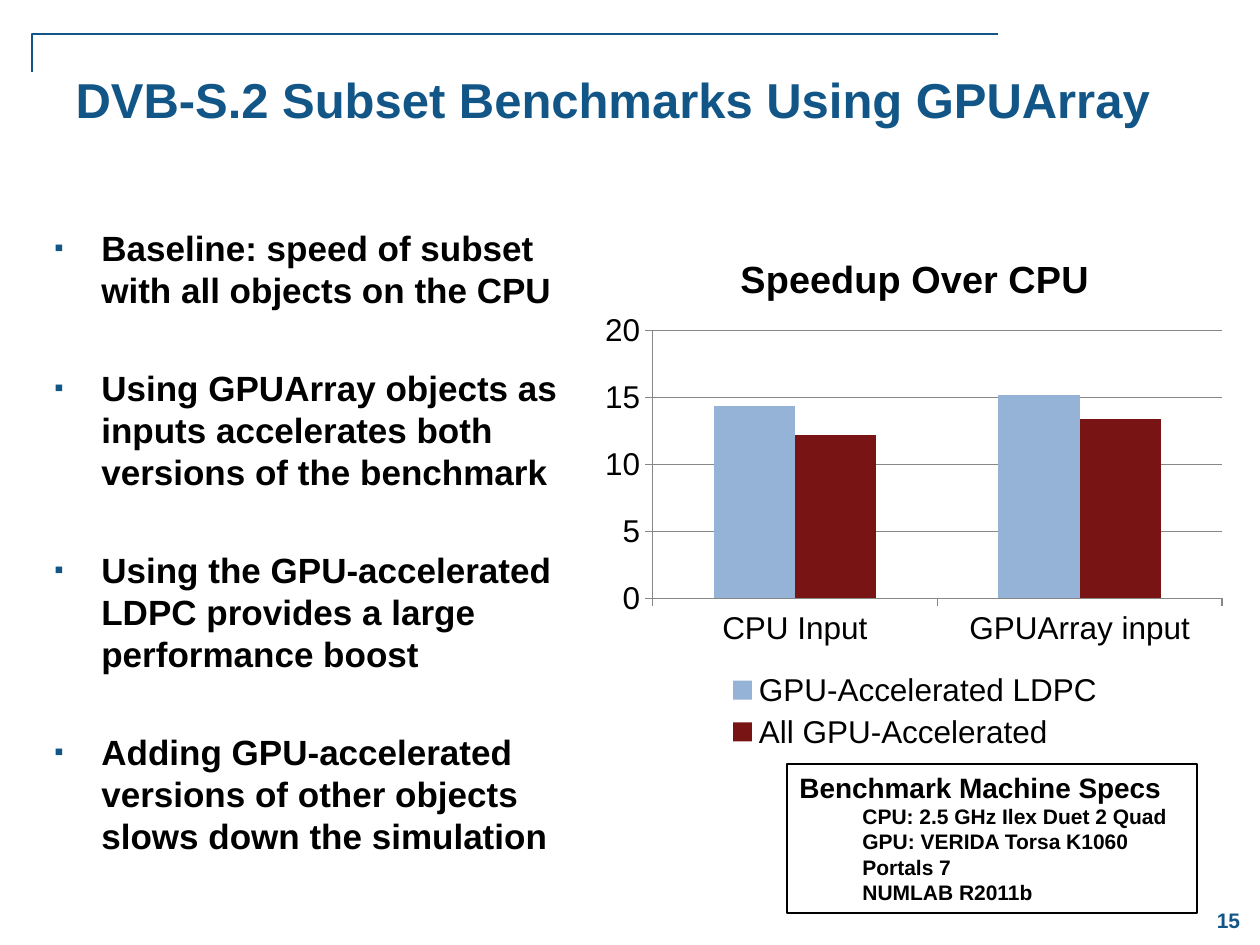
import pptx
import pptx.util
import pptx.chart.data
import pptx.dml.color
import pptx.enum.chart
import pptx.enum.text
import pptx.enum.shapes
import pptx.oxml

NS = 'xmlns:a="http://schemas.openxmlformats.org/drawingml/2006/main"'
CNS = 'xmlns:c="http://schemas.openxmlformats.org/drawingml/2006/chart"'
ALIGN = pptx.enum.text.PP_ALIGN
ANCHOR = pptx.enum.text.MSO_ANCHOR
CHART = pptx.enum.chart
BLUE, BLACK, GREY = "125687", "000000", "878787"
FONT = "Arial"


def px(n):
    return pptx.util.Emu(round(n * 914400 / 126))


def tint(code):
    return pptx.dml.color.RGBColor.from_string(code)


def style(font, size, color=BLACK, bold=True):
    font.name, font.size, font.bold = FONT, pptx.util.Pt(size), bold
    font.color.rgb = tint(color)


def write(frame, text, size=20, color=BLACK, align=ALIGN.LEFT,
          indent=0, bullet=None, gap=0):
    """Put text in the frame's empty first paragraph, or in a new one."""
    first = frame.paragraphs[0]
    para = frame.add_paragraph() if first.runs else first
    props = para._p.get_or_add_pPr()
    if indent:
        props.set("marL", str(px(indent)))
        props.set("indent", str(-px(indent) if bullet else 0))
    if bullet:
        for part in (f'<a:buClr {NS}><a:srgbClr val="{BLUE}"/></a:buClr>',
                     f'<a:buSzPct {NS} val="75000"/>',
                     f'<a:buFont {NS} typeface="{FONT}"/>',
                     f'<a:buChar {NS} char="{bullet}"/>'):
            props.append(pptx.oxml.parse_xml(part))
    para.alignment = align
    if gap:
        para.space_before = pptx.util.Pt(gap)
    run = para.add_run()
    run.text = text
    style(run.font, size, color)


def place(chart, **share):
    """Fix the inner plot area, in shares of the chart's size."""
    area = chart._chartSpace.chart.plotArea
    for old in area.xpath("c:layout"):
        area.remove(old)
    parts = "".join(f'<c:{key} val="{val}"/>' for key, val in share.items())
    area.insert(0, pptx.oxml.parse_xml(
        f'<c:layout {CNS}><c:manualLayout><c:layoutTarget val="inner"/>'
        f'<c:xMode val="edge"/><c:yMode val="edge"/>{parts}'
        '</c:manualLayout></c:layout>'))


class Deck:
    def __init__(self):
        self.file = pptx.Presentation()
        self.file.slide_width, self.file.slide_height = px(1260), px(945)
        self.slide = self.file.slides.add_slide(self.file.slide_layouts[5])
        self.shapes = self.slide.shapes

    def title(self, text, box):
        head = self.shapes.title
        head.left, head.top, head.width, head.height = map(px, box)
        frame = head.text_frame
        frame.word_wrap = True
        frame.auto_size = pptx.enum.text.MSO_AUTO_SIZE.NONE
        frame.vertical_anchor = ANCHOR.TOP
        write(frame, text, size=28, color=BLUE)

    def text(self, box, anchor=ANCHOR.TOP):
        frame = self.shapes.add_textbox(*map(px, box)).text_frame
        frame.word_wrap = True
        frame.vertical_anchor = anchor
        return frame

    def panel(self, box):
        kind = pptx.enum.shapes.MSO_SHAPE.RECTANGLE
        shape = self.shapes.add_shape(kind, *map(px, box))
        shape.shadow.inherit = False
        shape.fill.background()
        shape.line.color.rgb = tint(BLACK)
        shape.line.width = pptx.util.Pt(0.75)
        shape.text_frame.vertical_anchor = ANCHOR.TOP
        shape.text_frame.word_wrap = True
        return shape.text_frame

    def path_line(self, start, *rest):
        pen = self.shapes.build_freeform(*map(px, start))
        pen.add_line_segments([tuple(map(px, spot)) for spot in rest], close=False)
        shape = pen.convert_to_shape()
        shape.shadow.inherit = False
        shape.fill.background()
        shape.line.color.rgb = tint(BLUE)
        shape.line.width = pptx.util.Pt(1)

    def columns(self, box, title, cats, series):
        data = pptx.chart.data.CategoryChartData()
        data.categories = cats
        for name, vals, _ in series:
            data.add_series(name, vals)
        kind = CHART.XL_CHART_TYPE.COLUMN_CLUSTERED
        chart = self.shapes.add_chart(kind, *map(px, box), data).chart
        style(chart.font, 18, bold=False)
        chart.has_title = True
        write(chart.chart_title.text_frame, title, size=21.6, align=ALIGN.CENTER)
        chart.has_legend = True
        chart.legend.position = CHART.XL_LEGEND_POSITION.BOTTOM
        chart.legend.include_in_layout = False
        place(chart, x=0.09, y=0.19, w=0.89, h=0.51)

        plot = chart.plots[0]
        plot.gap_width, plot.overlap = 150, 0
        plot.vary_by_categories = False
        for bars, (_, _, color) in zip(plot.series, series):
            bars.format.fill.solid()
            bars.format.fill.fore_color.rgb = tint(color)
            bars.invert_if_negative = False

        scale = chart.value_axis
        scale.minimum_scale, scale.maximum_scale, scale.major_unit = 0, 20, 5
        scale.has_major_gridlines = True
        for axis in (scale, chart.category_axis):
            axis.major_tick_mark = CHART.XL_TICK_MARK.OUTSIDE
            axis.format.line.color.rgb = tint(GREY)
        scale.major_gridlines.format.line.color.rgb = tint(GREY)


def main():
    deck = Deck()

    # Corner rule and page number
    deck.path_line((998, 34), (32, 34), (32, 72))
    page = deck.text((1197, 894, 63, 53), ANCHOR.MIDDLE)
    write(page, "15", size=12, color=BLUE, align=ALIGN.CENTER)

    deck.title("DVB-S.2 Subset Benchmarks Using GPUArray", (63, 63, 1113, 136))

    # Speedup chart
    deck.columns((595, 231, 640, 525), "Speedup Over CPU",
                 ["CPU Input", "GPUArray input"],
                 [("GPU-Accelerated LDPC", (14.4, 15.2), "95B3D7"),
                  ("All GPU-Accelerated", (12.2, 13.4), "781414")])

    # Findings
    points = ["Baseline: speed of subset with all objects on the CPU",
              "Using GPUArray objects as inputs accelerates both versions of the benchmark",
              "Using the GPU-accelerated LDPC provides a large performance boost",
              "Adding GPU-accelerated versions of other objects slows down the simulation"]
    body = deck.text((42, 220, 557, 640))
    for i, point in enumerate(points):
        write(body, point, indent=47, bullet="▪", gap=32 if i else 0)

    # Test machine
    specs = deck.panel((787, 764, 410, 149))
    write(specs, "Benchmark Machine Specs", size=16)
    for line in ("CPU: 2.5 GHz Ilex Duet 2 Quad", "GPU: VERIDA Torsa K1060",
                 "Portals 7", "NUMLAB R2011b"):
        write(specs, line, size=12, indent=63)

    deck.file.save("out.pptx")


if __name__ == "__main__":
    main()
